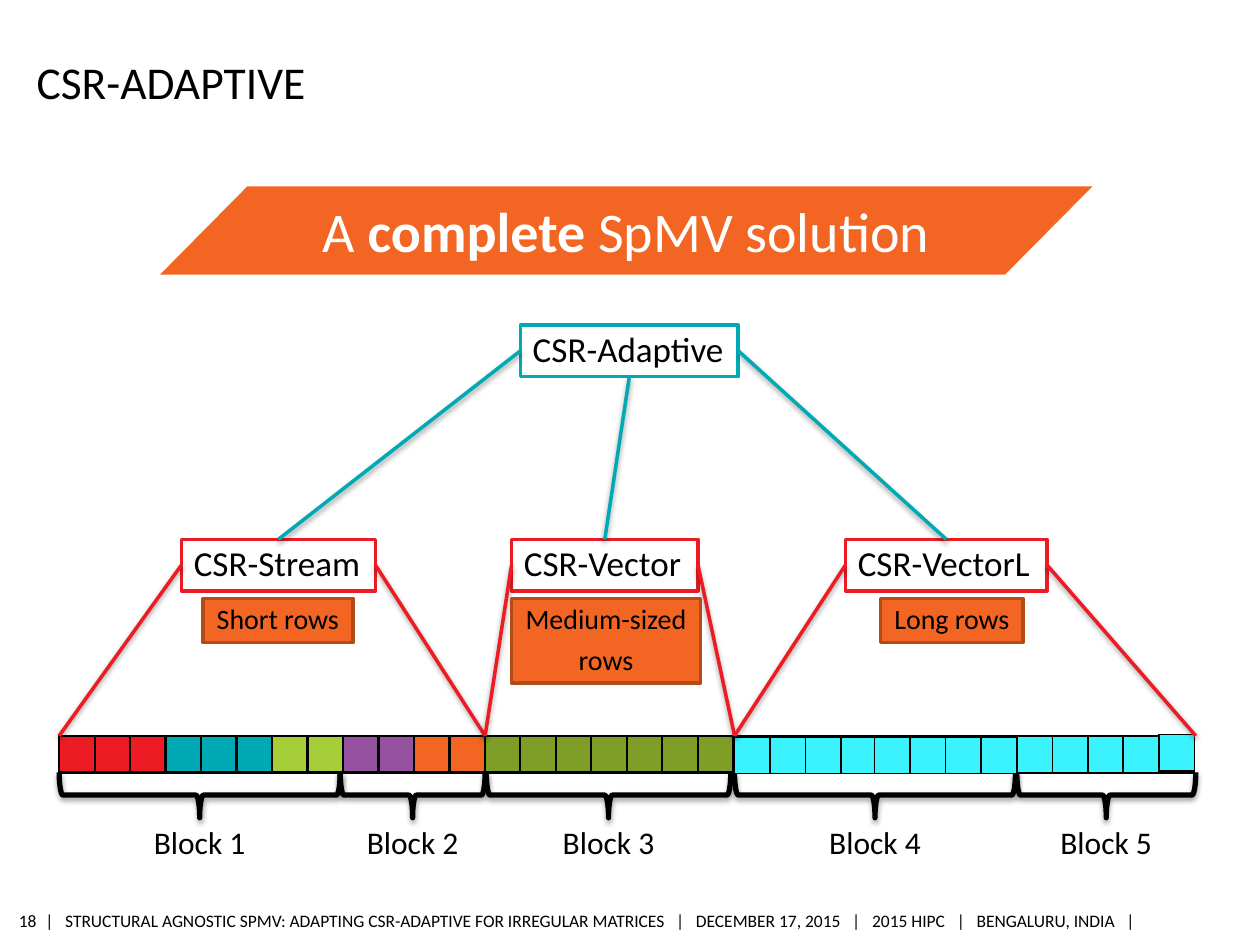
"""Build the CSR-Adaptive overview slide."""
from dataclasses import dataclass
from itertools import chain, repeat

from lxml.etree import SubElement
from pptx import Presentation
from pptx.dml.color import RGBColor
from pptx.enum.shapes import MSO_CONNECTOR, MSO_SHAPE
from pptx.enum.text import MSO_ANCHOR, PP_ALIGN
from pptx.oxml.ns import qn
from pptx.shapes.autoshape import Shape
from pptx.slide import Slide
from pptx.util import Inches, Pt


@dataclass(frozen=True)
class Theme:
    font: str = "Calibri"
    black: str = "000000"
    white: str = "FFFFFF"
    red: str = "ED1C24"
    teal: str = "00AAB5"
    lime: str = "A6CE39"
    purple: str = "9650A0"
    orange: str = "F26522"
    rust: str = "B34B19"
    olive: str = "7E9E27"
    cyan: str = "3AF3FF"
    footer: int = 10
    note: int = 16
    label: int = 18
    node: int = 20
    title: int = 26
    banner: int = 32


@dataclass(frozen=True)
class Box:
    text: str
    x: float
    y: float
    w: float
    h: float

    @property
    def right(self) -> float:
        return self.x + self.w

    @property
    def bottom(self) -> float:
        return self.y + self.h

    @property
    def mid_x(self) -> float:
        return self.x + self.w / 2

    @property
    def mid_y(self) -> float:
        return self.y + self.h / 2

    @property
    def rect(self) -> list:
        return [Inches(v) for v in (self.x, self.y, self.w, self.h)]


@dataclass(frozen=True)
class Strategy:
    node: Box
    note: Box
    start: float
    end: float


@dataclass(frozen=True)
class Block:
    x: float
    w: float


@dataclass(frozen=True)
class Strip:
    x: float
    y: float
    colors: list
    border: float


T = Theme()
CELL = 9.02 / 32
STRIP_Y, STRIP_H = 5.84, 0.29
BRACE_Y, BRACE_H = 6.31, 0.36
LABEL_Y, LABEL_W, LABEL_H = 6.48, 0.94, 0.4

TITLE = Box("CSR-ADAPTIVE", 0.29, 0.34, 8.4, 0.52)
FOOTER = Box("|   STRUCTURAL AGNOSTIC SPMV: ADAPTING CSR-ADAPTIVE FOR IRREGULAR MATRICES   |   "
             "DECEMBER 17, 2015   |   2015 HIPC   |   BENGALURU, INDIA   |", 0.36, 7.18, 8.73, 0.26)
PAGE = Box("18", 0.13, 7.18, 0.16, 0.26)
BANNER = Box("A *complete *SpMV solution", 1.27, 1.48, 7.4, 0.7)
ROOT = Box("CSR-Adaptive", 4.13, 2.58, 1.73, 0.41)
STRATEGIES = [
    Strategy(Box("CSR-Stream", 1.44, 4.28, 1.54, 0.41), Box("Short rows", 1.61, 4.75, 1.19, 0.35), 0.47, 3.85),
    Strategy(Box("CSR-Vector", 4.06, 4.28, 1.48, 0.41), Box("Medium-sized\nrows", 4.06, 4.75, 1.5, 0.67), 3.85, 5.83),
    Strategy(Box("CSR-VectorL", 6.71, 4.28, 1.6, 0.41), Box("Long rows", 6.99, 4.75, 1.13, 0.35), 5.83, 9.49),
]
BLOCKS = [Block(0.47, 2.23), Block(2.7, 1.15), Block(3.86, 1.94), Block(5.83, 2.23), Block(8.07, 1.42)]
RUNS = [(T.red, 3), (T.teal, 3), (T.lime, 2), (T.purple, 2), (T.orange, 2), (T.olive, 7), (T.cyan, 13)]
ROW = Strip(0.47, STRIP_Y, list(chain.from_iterable(repeat(c, n) for c, n in RUNS)), 1.5)
LONG_ROWS = [Strip(x, y, [T.cyan] * n, 1)
             for x, y, n in [(5.83, 5.85, 4), (8.07, 5.84, 4), (6.94, 5.85, 4), (9.2, 5.83, 1)]]


def apply(obj, fmt: dict) -> None:
    for name, value in fmt.items():
        setattr(obj, name, value)


def rgb(color: str) -> RGBColor:
    return RGBColor.from_string(color)


def write(sp: Shape, text: str, size: int, color: str = T.black, align=PP_ALIGN.LEFT,
          frame: dict | None = None, para: dict | None = None) -> None:
    tf = sp.text_frame
    apply(tf, {"word_wrap": False, "vertical_anchor": MSO_ANCHOR.MIDDLE} | (frame or {}))
    for i, line in enumerate(text.split("\n")):
        p = tf.paragraphs[0] if i == 0 else tf.add_paragraph()
        apply(p, {"alignment": align} | (para or {}))
        if i == 0:
            p.space_before = Pt(0)
        for j, part in enumerate(line.split("*")):
            r = p.add_run()
            r.text = part
            apply(r.font, {"name": T.font, "size": Pt(size), "bold": j % 2 == 1})
            r.font.color.rgb = rgb(color)


def add_text(s: Slide, box: Box, size: int, **kwargs) -> None:
    write(s.shapes.add_textbox(*box.rect), box.text, size, **kwargs)


def add_node(s: Slide, box: Box, fill: str, line: str, size: int, align=PP_ALIGN.LEFT) -> None:
    sp = s.shapes.add_shape(MSO_SHAPE.RECTANGLE, *box.rect)
    sp.shadow.inherit = False
    sp.fill.solid()
    sp.fill.fore_color.rgb = rgb(fill)
    sp.line.color.rgb = rgb(line)
    sp.line.width = Pt(2)
    write(sp, box.text, size, align=align,
          para={"line_spacing": 0.9, "space_before": Pt(3), "space_after": Pt(3)})


def add_shadow(sp) -> None:
    effects = SubElement(sp._element.spPr, qn("a:effectLst"))
    shadow = SubElement(effects, qn("a:outerShdw"), blurRad="40000", dist="20000", dir="5400000", rotWithShape="0")
    color = SubElement(shadow, qn("a:srgbClr"), val=T.black)
    SubElement(color, qn("a:alpha"), val="38000")


def add_line(s: Slide, start: tuple, end: tuple, color: str) -> None:
    sp = s.shapes.add_connector(MSO_CONNECTOR.STRAIGHT, *[Inches(v) for v in (*start, *end)])
    sp.line.color.rgb = rgb(color)
    sp.line.width = Pt(2)
    add_shadow(sp)


def add_strip(s: Slide, strip: Strip) -> None:
    n = len(strip.colors)
    frame = Box("", strip.x, strip.y, CELL * n, STRIP_H)
    table = s.shapes.add_table(1, n, *frame.rect).table
    apply(table, {"first_row": False, "horz_banding": False})
    for i, color in enumerate(strip.colors):
        table.columns[i].width = Inches(CELL)
        cell = table.cell(0, i)
        apply(cell, {f"margin_{side}": 0 for side in ("left", "right", "top", "bottom")})
        cell.text_frame.paragraphs[0]._p.get_or_add_endParaRPr().set("sz", "800")
        tc_pr = cell._tc.get_or_add_tcPr()
        for side in ("L", "R", "T", "B"):
            ln = SubElement(tc_pr, qn(f"a:ln{side}"), w=str(Pt(strip.border)))
            SubElement(SubElement(ln, qn("a:solidFill")), qn("a:srgbClr"), val=T.black)
        cell.fill.solid()
        cell.fill.fore_color.rgb = rgb(color)


def add_block(s: Slide, number: int, block: Block) -> None:
    mid = block.x + block.w / 2
    brace = Box("", mid - BRACE_H / 2, BRACE_Y - block.w / 2, BRACE_H, block.w)
    sp = s.shapes.add_shape(MSO_SHAPE.LEFT_BRACE, *brace.rect)
    sp.rotation = 270
    sp.fill.background()
    sp.line.color.rgb = rgb(T.black)
    sp.line.width = Pt(3)
    add_shadow(sp)
    label = Box(f"Block {number}", mid - LABEL_W / 2, LABEL_Y, LABEL_W, LABEL_H)
    add_text(s, label, T.label, align=PP_ALIGN.CENTER, frame={"vertical_anchor": MSO_ANCHOR.TOP})


def add_banner(s: Slide) -> None:
    sp = s.shapes.add_shape(MSO_SHAPE.PARALLELOGRAM, *BANNER.rect)
    sp.adjustments[0] = 0.99
    sp.shadow.inherit = False
    sp.fill.solid()
    sp.fill.fore_color.rgb = rgb(T.orange)
    sp.line.fill.background()
    write(sp, BANNER.text, T.banner, T.white, PP_ALIGN.CENTER, {"word_wrap": True})


def main() -> None:
    prs = Presentation()
    apply(prs, {"slide_width": Inches(10), "slide_height": Inches(7.5)})
    s = prs.slides.add_slide(prs.slide_layouts[6])
    flush = {"margin_left": 0, "margin_right": 0}
    add_text(s, FOOTER, T.footer, frame=flush)
    add_text(s, PAGE, T.footer, align=PP_ALIGN.RIGHT, frame=flush)
    add_text(s, TITLE, T.title,
             frame=flush | {"margin_bottom": 0, "word_wrap": True, "vertical_anchor": MSO_ANCHOR.BOTTOM})
    add_strip(s, ROW)
    for number, block in enumerate(BLOCKS, 1):
        add_block(s, number, block)
    for strip in LONG_ROWS:
        add_strip(s, strip)
    for st in STRATEGIES:
        add_node(s, st.node, T.white, T.red, T.node)
        add_line(s, (st.node.x, st.node.mid_y), (st.start, STRIP_Y), T.red)
        add_line(s, (st.node.right, st.node.mid_y), (st.end, STRIP_Y), T.red)
    add_node(s, ROOT, T.white, T.teal, T.node)
    exits = [(ROOT.x, ROOT.mid_y), (ROOT.mid_x, ROOT.bottom), (ROOT.right, ROOT.mid_y)]
    for start, st in zip(exits, STRATEGIES):
        add_line(s, start, (st.node.mid_x, st.node.y), T.teal)
        add_node(s, st.note, T.orange, T.rust, T.note, PP_ALIGN.CENTER)
    add_banner(s)
    prs.save("out.pptx")


if __name__ == "__main__":
    main()
